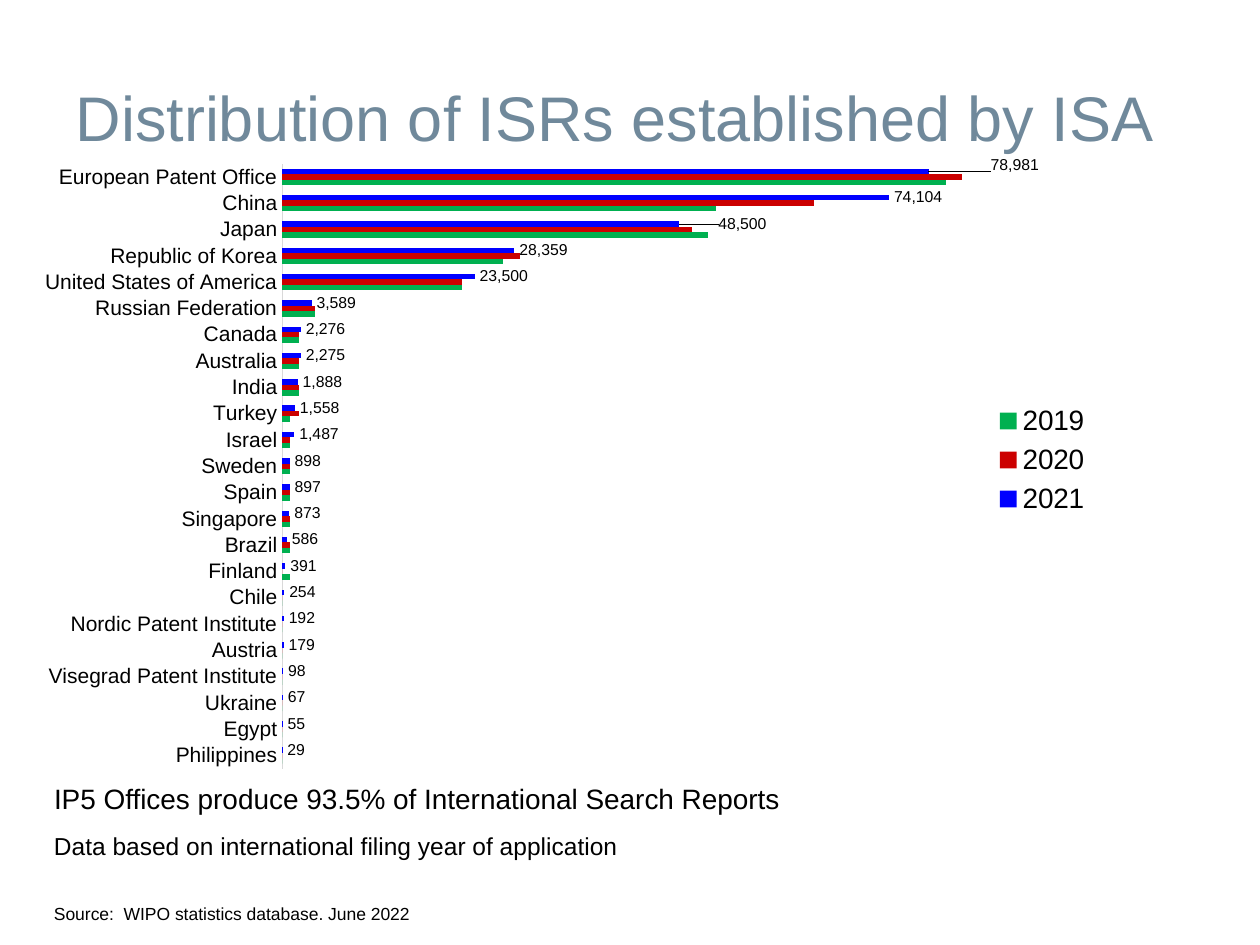
from lxml import etree
from pptx import Presentation
from pptx import util as u
from pptx.chart.data import CategoryChartData
from pptx.dml.color import RGBColor
from pptx.enum import chart as charts, text
from pptx.oxml import parse_xml
from pptx.oxml.ns import nsdecls, qn

COLORS = {"title": "70899B", "ink": "000000", "axis": "D9D9D9",
          "2021": "0000FF", "2020": "CC0000", "2019": "00B050"}
FONT = "Arial"
WIDTH, HEIGHT = u.Inches(10), u.Inches(7.5)

OFFICES = ["European Patent Office", "China", "Japan", "Republic of Korea",
           "United States of America", "Russian Federation", "Canada",
           "Australia", "India", "Turkey", "Israel", "Sweden", "Spain",
           "Singapore", "Brazil", "Finland", "Chile",
           "Nordic Patent Institute", "Austria", "Visegrad Patent Institute",
           "Ukraine", "Egypt", "Philippines"]
REPORTS = {
    "2021": [78981, 74104, 48500, 28359, 23500, 3589, 2276, 2275, 1888, 1558,
             1487, 898, 897, 873, 586, 391, 254, 192, 179, 98, 67, 55, 29],
    "2020": [83000, 65000, 50000, 29000, 22000, 4000, 2000, 2000, 2000, 2000]
            + [1000] * 5 + [0] * 8,
    "2019": [81000, 53000, 52000, 27000, 22000, 4000, 2000, 2000, 2000]
            + [1000] * 7 + [0] * 7,
}
LABEL_SHIFTS = {0: (0.05, -0.01), 2: (0.03, 0)}
TITLE_BOX = (0.05, 0.04, 0.9, 0.167)
CHART_BOX = (0.017, 0.16, 0.9, 0.667)
NOTES = [
    ("IP5 Offices produce 93.5% of International Search Reports",
     (0.029, 0.821, 0.604, 0.103), 16, text.PP_ALIGN.CENTER, False),
    ("Data based on international filing year of application",
     (0.033, 0.873, 0.47, 0.076), 14, text.PP_ALIGN.LEFT, False),
    ("Source:  WIPO statistics database. June 2022",
     (0.033, 0.949, 0.5, 0.036), 10, text.PP_ALIGN.LEFT, True),
]


def place(box):
    left, top, width, height = box
    return (round(left * WIDTH), round(top * HEIGHT),
            round(width * WIDTH), round(height * HEIGHT))


def style_font(font, size, color="ink"):
    font.name = FONT
    font.size = u.Pt(size)
    font.color.rgb = RGBColor.from_string(COLORS[color])


def add_title(page, box):
    title = page.shapes.title
    title.left, title.top, title.width, title.height = place(box)
    frame = title.text_frame
    frame.text = "Distribution of ISRs established by ISA"
    frame.auto_size = text.MSO_AUTO_SIZE.NONE
    frame.vertical_anchor = text.MSO_ANCHOR.MIDDLE
    para = frame.paragraphs[0]
    para.alignment = text.PP_ALIGN.LEFT
    style_font(para.font, 36, "title")


def add_note(page, wording, box, size, alignment, wraps):
    frame = page.shapes.add_textbox(*place(box)).text_frame
    frame.word_wrap = wraps
    frame.text = wording
    para = frame.paragraphs[0]
    para.alignment = alignment
    style_font(para.font, size)


def manual_layout(x, y, size=None, target=None):
    parts = []
    if target:
        parts.append(("layoutTarget", target))
    if size:
        parts += [("xMode", "edge"), ("yMode", "edge")]
    parts += [("x", x), ("y", y)]
    if size:
        parts += zip(("w", "h"), size)
    layout = parse_xml(f"<c:layout {nsdecls('c')}/>")
    manual = etree.SubElement(layout, qn("c:manualLayout"))
    for name, value in parts:
        etree.SubElement(manual, qn(f"c:{name}")).set("val", str(value))
    return layout


def set_layout(parent, layout, after=None):
    for existing in parent.findall(qn("c:layout")):
        parent.remove(existing)
    if after is None:
        parent.insert(0, layout)
    else:
        parent.find(qn(after)).addnext(layout)


def format_axes(chart):
    offices, values = chart.category_axis, chart.value_axis
    offices.reverse_order = True
    offices.major_tick_mark = charts.XL_TICK_MARK.NONE
    offices.has_major_gridlines = False
    offices.format.line.color.rgb = RGBColor.from_string(COLORS["axis"])
    offices.format.line.width = u.Pt(0.75)
    style_font(offices.tick_labels.font, 12)
    values.minimum_scale, values.maximum_scale = 0, 90000
    values.has_major_gridlines = False
    values.visible = False


def label_series(series):
    labels = series.data_labels
    labels.show_value = True
    labels.number_format = "#,##0"
    labels.number_format_is_linked = False
    labels.position = charts.XL_LABEL_POSITION.OUTSIDE_END
    style_font(labels.font, 9)
    for index, shift in LABEL_SHIFTS.items():
        label = series.points[index].data_label
        style_font(label.font, 9)
        label.position = charts.XL_LABEL_POSITION.OUTSIDE_END
    for element in labels._element.findall(qn("c:dLbl")):
        index = int(element.find(qn("c:idx")).get("val"))
        set_layout(element, manual_layout(*LABEL_SHIFTS[index]), "c:idx")


def add_reports_chart(page, box):
    data = CategoryChartData(number_format="#,##0")
    data.categories = OFFICES
    for year, values in REPORTS.items():
        data.add_series(year, values)
    chart = page.shapes.add_chart(
        charts.XL_CHART_TYPE.BAR_CLUSTERED, *place(box), data).chart
    style_font(chart.font, 10)
    chart.has_title = False
    format_axes(chart)
    plot = chart.plots[0]
    plot.gap_width, plot.overlap = 182, 0
    plot.vary_by_categories = False
    for series in plot.series:
        series.format.fill.solid()
        series.format.fill.fore_color.rgb = RGBColor.from_string(
            COLORS[series.name])
    label_series(plot.series[0])
    chart.has_legend = True
    legend = chart.legend
    legend.position = charts.XL_LEGEND_POSITION.RIGHT
    legend.include_in_layout = False
    style_font(legend.font, 16)
    set_layout(legend._element,
               manual_layout(0.84, 0.39, (0.12, 0.2)), "c:legendPos")
    set_layout(chart._chartSpace.chart.plotArea,
               manual_layout(0.23, 0.02, (0.65, 0.96), "inner"))


def main():
    deck = Presentation()
    deck.slide_width, deck.slide_height = WIDTH, HEIGHT
    page = deck.slides.add_slide(deck.slide_layouts[5])
    add_title(page, TITLE_BOX)
    for note in NOTES:
        add_note(page, *note)
    add_reports_chart(page, CHART_BOX)
    deck.save("out.pptx")


if __name__ == "__main__":
    main()
